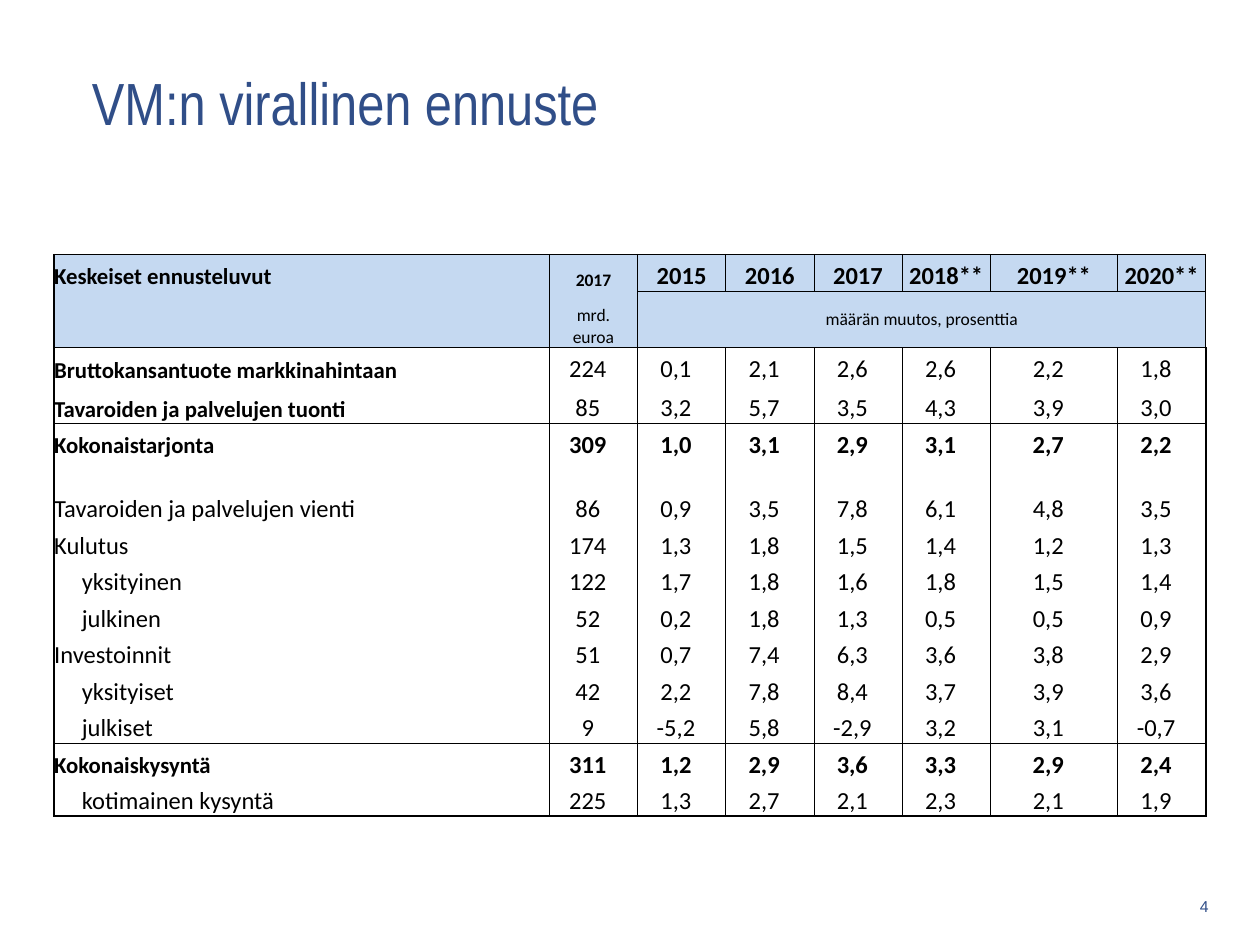
from lxml.etree import SubElement
from pptx import Presentation
from pptx.dml.color import RGBColor
from pptx.enum.text import MSO_ANCHOR, PP_ALIGN
from pptx.oxml.ns import qn
from pptx.util import Inches, Pt

TITLE = "VM:n virallinen ennuste"
PAGE_NUMBER = "4"
NAVY, BLACK, WHITE, HEADER_BLUE = "304E88", "000000", "FFFFFF", "C5D9F1"

YEARS = ["2015", "2016", "2017", "2018**", "2019**", "2020**"]
# Label, indent level, bold label, bold values, values
FORECAST = [
    ("Bruttokansantuote markkinahintaan", 0, True, False, "224 0,1 2,1 2,6 2,6 2,2 1,8"),
    ("Tavaroiden ja palvelujen tuonti", 0, True, False, "85 3,2 5,7 3,5 4,3 3,9 3,0"),
    ("Kokonaistarjonta", 0, True, True, "309 1,0 3,1 2,9 3,1 2,7 2,2"),
    None,
    ("Tavaroiden ja palvelujen vienti", 0, False, False, "86 0,9 3,5 7,8 6,1 4,8 3,5"),
    ("Kulutus", 0, False, False, "174 1,3 1,8 1,5 1,4 1,2 1,3"),
    ("yksityinen", 1, False, False, "122 1,7 1,8 1,6 1,8 1,5 1,4"),
    ("julkinen", 1, False, False, "52 0,2 1,8 1,3 0,5 0,5 0,9"),
    ("Investoinnit", 0, False, False, "51 0,7 7,4 6,3 3,6 3,8 2,9"),
    ("yksityiset", 1, False, False, "42 2,2 7,8 8,4 3,7 3,9 3,6"),
    ("julkiset", 1, False, False, "9 -5,2 5,8 -2,9 3,2 3,1 -0,7"),
    ("Kokonaiskysyntä", 0, True, True, "311 1,2 2,9 3,6 3,3 2,9 2,4"),
    ("kotimainen kysyntä", 1, False, False, "225 1,3 2,7 2,1 2,3 2,1 1,9"),
]
HEADER_ROWS = 2
COLUMN_WIDTHS = [3.93, 0.7, 0.7, 0.7, 0.7, 0.7, 1.01, 0.7]
ROW_HEIGHT = 0.29
SPECIAL_HEIGHTS = {1: 0.45, 3: 0.31, 5: 0.22}
RULED_ROWS = {1, 3, 12}  # rows with a thin line below
LABEL_INDENT, VALUE_INSET = 0.22, 0.09
PLAIN_TABLE_STYLE = "{2D5ABB26-0587-4C30-8999-92F81FD0307C}"


def rgb(code):
    return RGBColor.from_string(code)


def add_run(paragraph, text, size, font, color, bold=False):
    run = paragraph.add_run()
    run.text = text
    run.font.size, run.font.name, run.font.bold = Pt(size), font, bold
    run.font.color.rgb = rgb(color)


def write(cell, lines, size, bold=False, align=PP_ALIGN.CENTER):
    paragraph = cell.text_frame.paragraphs[0]
    paragraph.alignment = align
    for i, line in enumerate(lines):
        if i:
            paragraph.add_line_break()
        add_run(paragraph, line, size, "Calibri", BLACK, bold)


def border(cell, side, width):
    line = SubElement(cell._tc.get_or_add_tcPr(), qn(f"a:ln{side}"), w=str(Pt(width)))
    if width:
        color = SubElement(SubElement(line, qn("a:solidFill")), qn("a:srgbClr"))
        color.set("val", BLACK)
    else:
        SubElement(line, qn("a:noFill"))


def line_below(row, column, last_row):
    if row in (-1, last_row):
        return 1
    return 0.5 if row in RULED_ROWS or (row == 0 and column > 1) else 0


def style_grid(table):
    last_row, last_column = len(table.rows) - 1, len(table.columns) - 1
    for row in range(last_row + 1):
        for column in range(last_column + 1):
            cell = table.cell(row, column)
            cell.margin_left = cell.margin_right = 0
            cell.margin_top = cell.margin_bottom = 0
            cell.vertical_anchor = MSO_ANCHOR.BOTTOM
            border(cell, "L", 1 if column == 0 else 0.5)
            border(cell, "R", 1 if column == last_column and row else 0.5)
            border(cell, "T", line_below(row - 1, column, last_row))
            border(cell, "B", line_below(row, column, last_row))
            cell.fill.solid()
            cell.fill.fore_color.rgb = rgb(HEADER_BLUE if row < HEADER_ROWS else WHITE)


def fill_header(table):
    write(table.cell(0, 0), ["Keskeiset ennusteluvut"], 13, True, PP_ALIGN.LEFT)
    write(table.cell(0, 1), ["2017"], 10, True)
    for column, year in enumerate(YEARS, 2):
        write(table.cell(0, column), [year], 14, True)
    write(table.cell(1, 1), ["mrd.", "euroa"], 10)
    unit = table.cell(1, 2)
    unit.merge(table.cell(1, len(COLUMN_WIDTHS) - 1))
    unit.vertical_anchor = MSO_ANCHOR.MIDDLE
    write(unit, ["määrän muutos, prosenttia"], 10)


def fill_forecast(table):
    for row, entry in enumerate(FORECAST, HEADER_ROWS):
        if entry is None:
            continue
        label, level, bold_label, bold_values, values = entry
        label_cell = table.cell(row, 0)
        label_cell.margin_left = Inches(level * LABEL_INDENT)
        write(label_cell, [label], 13 if bold_label else 14, bold_label, PP_ALIGN.LEFT)
        for column, value in enumerate(values.split(), 1):
            value_cell = table.cell(row, column)
            value_cell.margin_right = Inches(VALUE_INSET)
            write(value_cell, [value], 14, bold_values)


def shrink_empty_cells(table):
    # Small end mark, so that empty cells do not stretch their row
    for cell in table.iter_cells():
        if not cell.text_frame.text:
            SubElement(cell.text_frame.paragraphs[0]._p, qn("a:endParaRPr"), sz="1000")


def main():
    deck = Presentation()
    deck.slide_width, deck.slide_height = Inches(10), Inches(7.5)
    slide = deck.slides.add_slide(deck.slide_layouts[5])

    # Title
    title = slide.shapes.title
    title.left, title.top = Inches(0.63), Inches(0.16)
    title.width, title.height = Inches(7.99), Inches(1.3)
    title.text_frame.vertical_anchor = MSO_ANCHOR.MIDDLE
    heading = title.text_frame.paragraphs[0]
    heading.alignment = PP_ALIGN.LEFT
    add_run(heading, TITLE, 34, "Arial Narrow", NAVY)

    # Forecast table
    row_count = HEADER_ROWS + len(FORECAST)
    heights = [SPECIAL_HEIGHTS.get(row, ROW_HEIGHT) for row in range(row_count)]
    frame = slide.shapes.add_table(
        row_count, len(COLUMN_WIDTHS), Inches(0.43), Inches(2.02),
        Inches(sum(COLUMN_WIDTHS)), Inches(sum(heights)))
    table = frame.table
    table.first_row = table.horz_banding = False
    table._tbl.tblPr.find(qn("a:tableStyleId")).text = PLAIN_TABLE_STYLE
    for column, width in zip(table.columns, COLUMN_WIDTHS):
        column.width = Inches(width)
    for row, height in zip(table.rows, heights):
        row.height = Inches(height)
    style_grid(table)
    fill_header(table)
    fill_forecast(table)
    shrink_empty_cells(table)

    # Page number
    number = slide.shapes.add_textbox(Inches(9.17), Inches(7.03), Inches(0.52), Inches(0.32))
    number.text_frame.word_wrap = True
    number.text_frame.vertical_anchor = MSO_ANCHOR.MIDDLE
    number_line = number.text_frame.paragraphs[0]
    number_line.alignment = PP_ALIGN.RIGHT
    add_run(number_line, PAGE_NUMBER, 9, "Arial", NAVY)

    deck.save("out.pptx")


if __name__ == "__main__":
    main()
